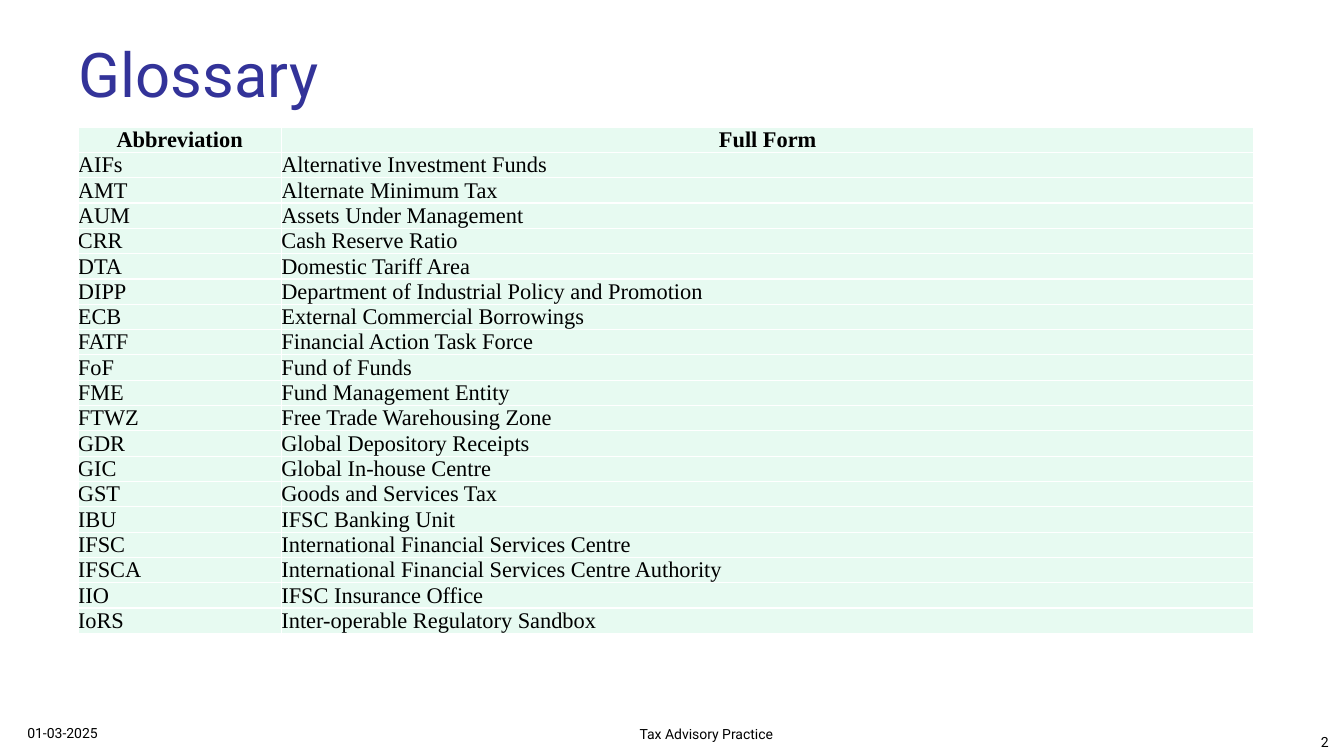
from dataclasses import dataclass

import pptx
import pptx.dml.color
import pptx.enum.text
import pptx.oxml
import pptx.oxml.ns
import pptx.presentation
import pptx.slide
import pptx.table
import pptx.text.text
import pptx.util

ALIGN = pptx.enum.text.PP_ALIGN
ANCHOR = pptx.enum.text.MSO_ANCHOR
WIDTH, HEIGHT = 13.33, 7.5


@dataclass(frozen=True)
class TextStyle:
    size: float
    font: str
    color: str
    bold: bool = False
    align: ALIGN = ALIGN.LEFT


@dataclass(frozen=True)
class Theme:
    title: TextStyle = TextStyle(44, "Roboto", "333399")
    header: TextStyle = TextStyle(16, "Times New Roman", "000000", True, ALIGN.CENTER)
    body: TextStyle = TextStyle(16, "Times New Roman", "000000")
    date: TextStyle = TextStyle(10, "Roboto", "000000")
    firm: TextStyle = TextStyle(10, "Roboto", "000000", align=ALIGN.CENTER)
    number: TextStyle = TextStyle(10, "Roboto", "000000", align=ALIGN.RIGHT)
    cell_fill: str = "E7FAF1"
    border: str = "FFFFFF"
    border_width: float = 1


@dataclass(frozen=True)
class Area:
    """Place and extent as shares of the slide's width and height."""
    left: float
    top: float
    width: float
    height: float

    def lengths(self) -> dict[str, int]:
        return {
            "left": pptx.util.Inches(self.left * WIDTH),
            "top": pptx.util.Inches(self.top * HEIGHT),
            "width": pptx.util.Inches(self.width * WIDTH),
            "height": pptx.util.Inches(self.height * HEIGHT),
        }


@dataclass(frozen=True)
class FooterItem:
    text: str
    area: Area
    style: TextStyle


@dataclass(frozen=True)
class Entry:
    abbreviation: str
    full_form: str


THEME = Theme()
TITLE_AREA = Area(0.051, -0.015, 0.852, 0.167)
TABLE_AREA = Area(0.058, 0.168, 0.875, 0.67)
COLUMN_SHARES = (0.173, 0.827)

HEADER = Entry("Abbreviation", "Full Form")
ENTRIES = (
    Entry("AIFs", "Alternative Investment Funds"),
    Entry("AMT", "Alternate Minimum Tax"),
    Entry("AUM", "Assets Under Management"),
    Entry("CRR", "Cash Reserve Ratio"),
    Entry("DTA", "Domestic Tariff Area"),
    Entry("DIPP", "Department of Industrial Policy and Promotion"),
    Entry("ECB", "External Commercial Borrowings"),
    Entry("FATF", "Financial Action Task Force"),
    Entry("FoF", "Fund of Funds"),
    Entry("FME", "Fund Management Entity"),
    Entry("FTWZ", "Free Trade Warehousing Zone"),
    Entry("GDR", "Global Depository Receipts"),
    Entry("GIC", "Global In-house Centre"),
    Entry("GST", "Goods and Services Tax"),
    Entry("IBU", "IFSC Banking Unit"),
    Entry("IFSC", "International Financial Services Centre"),
    Entry("IFSCA", "International Financial Services Centre Authority"),
    Entry("IIO", "IFSC Insurance Office"),
    Entry("IoRS", "Inter-operable Regulatory Sandbox"),
)
FOOTER = (
    FooterItem("01-03-2025", Area(0.013, 0.92, 0.074, 0.067), THEME.date),
    FooterItem("Tax Advisory Practice", Area(0.317, 0.922, 0.417, 0.067), THEME.firm),
    FooterItem("2", Area(0.957, 0.932, 0.039, 0.067), THEME.number),
)


def set_all(target: object, values: dict[str, object]) -> None:
    for name, value in values.items():
        setattr(target, name, value)


def write(frame: pptx.text.text.TextFrame, text: str, style: TextStyle) -> None:
    para = frame.paragraphs[0]
    para.alignment = style.align
    span = para.add_run()
    span.text = text
    set_all(span.font, {
        "size": pptx.util.Pt(style.size), "name": style.font, "bold": style.bold,
    })
    span.font.color.rgb = pptx.dml.color.RGBColor.from_string(style.color)


def add_borders(cell: pptx.table._Cell) -> None:
    properties = cell._tc.get_or_add_tcPr()
    width = pptx.util.Pt(THEME.border_width)
    for index, side in enumerate(("lnL", "lnR", "lnT", "lnB")):
        properties.insert(index, pptx.oxml.parse_xml(
            f'<a:{side} {pptx.oxml.ns.nsdecls("a")} w="{width}"><a:solidFill>'
            f'<a:srgbClr val="{THEME.border}"/></a:solidFill></a:{side}>'
        ))


def fill_cell(cell: pptx.table._Cell, text: str, style: TextStyle) -> None:
    set_all(cell, {
        "margin_left": 0, "margin_right": 0, "margin_top": 0, "margin_bottom": 0,
        "vertical_anchor": ANCHOR.BOTTOM,
    })
    cell.fill.solid()
    cell.fill.fore_color.rgb = pptx.dml.color.RGBColor.from_string(THEME.cell_fill)
    add_borders(cell)
    write(cell.text_frame, text, style)


def add_title(page: pptx.slide.Slide, text: str) -> None:
    title = page.shapes.title
    set_all(title, TITLE_AREA.lengths())
    set_all(title.text_frame, {
        "word_wrap": True, "vertical_anchor": ANCHOR.BOTTOM,
        "auto_size": pptx.enum.text.MSO_AUTO_SIZE.NONE,
    })
    write(title.text_frame, text, THEME.title)


def add_glossary(page: pptx.slide.Slide) -> None:
    rows = (HEADER, *ENTRIES)
    lengths = TABLE_AREA.lengths()
    table = page.shapes.add_table(len(rows), len(COLUMN_SHARES), **lengths).table
    table.horz_banding = False
    for column, share in zip(table.columns, COLUMN_SHARES):
        column.width = round(lengths["width"] * share)
    for row, entry in zip(table.rows, rows):
        row.height = lengths["height"] // len(rows)
        style = THEME.header if entry is HEADER else THEME.body
        for cell, text in zip(row.cells, (entry.abbreviation, entry.full_form)):
            fill_cell(cell, text, style)


def add_footer_item(page: pptx.slide.Slide, item: FooterItem) -> None:
    box = page.shapes.add_textbox(**item.area.lengths())
    set_all(box.text_frame, {"word_wrap": True, "vertical_anchor": ANCHOR.BOTTOM})
    write(box.text_frame, item.text, item.style)


def main() -> None:
    deck = pptx.Presentation()
    set_all(deck, {
        "slide_width": pptx.util.Inches(WIDTH),
        "slide_height": pptx.util.Inches(HEIGHT),
    })
    page = deck.slides.add_slide(deck.slide_layouts.get_by_name("Title Only"))

    # Heading
    add_title(page, "Glossary")

    # Abbreviations and their full forms
    add_glossary(page)

    # Date, firm and page number
    for item in FOOTER:
        add_footer_item(page, item)

    deck.save("out.pptx")


if __name__ == "__main__":
    main()
